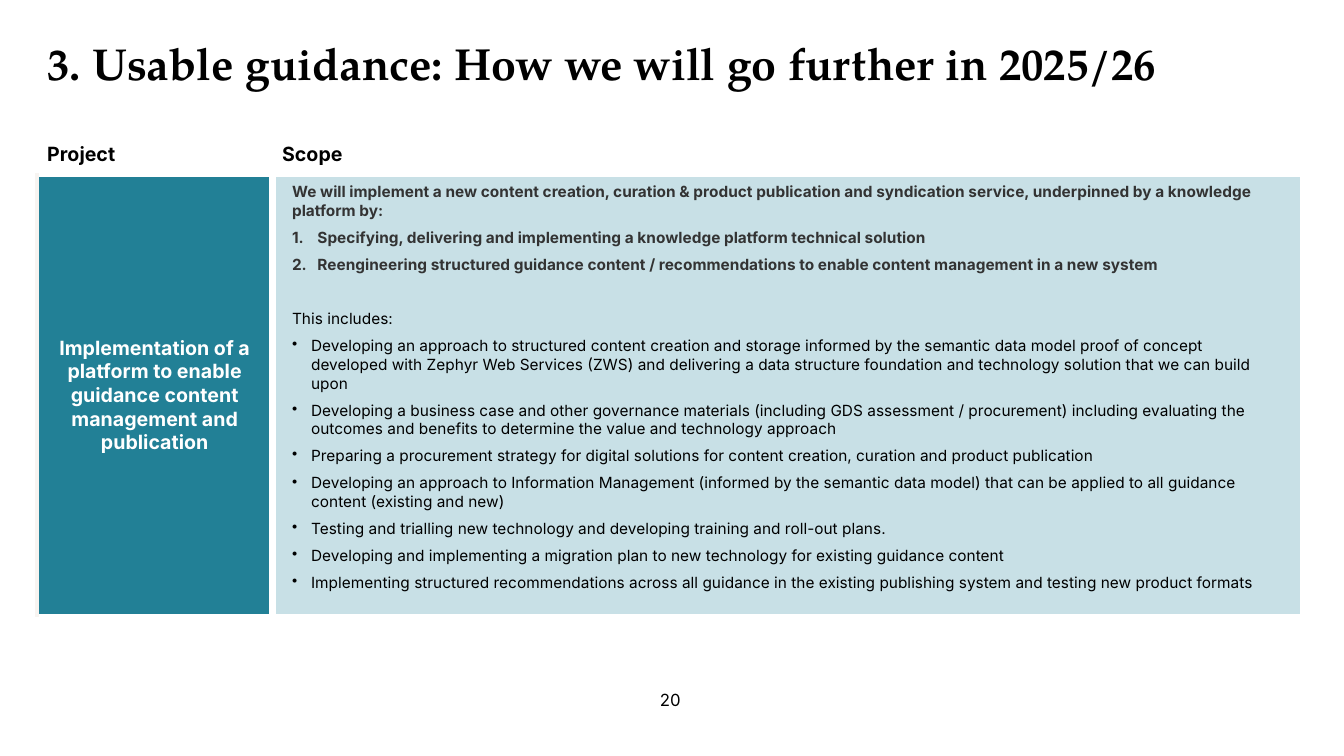
import pptx
import pptx.util
import pptx.dml.color
import pptx.enum.text
from lxml import etree
from pptx.oxml.ns import qn

Cm, Pt = pptx.util.Cm, pptx.util.Pt
RGBColor = pptx.dml.color.RGBColor
ALIGN, ANCHOR = pptx.enum.text.PP_ALIGN, pptx.enum.text.MSO_ANCHOR

BLACK = RGBColor(0x00, 0x00, 0x00)
WHITE = RGBColor(0xFF, 0xFF, 0xFF)
CHARCOAL = RGBColor(0x33, 0x33, 0x33)
TEAL = RGBColor(0x22, 0x80, 0x96)
PALE_TEAL = RGBColor(0xC8, 0xE0, 0xE6)
CREAM = RGBColor(0xF7, 0xF4, 0xF1)
HEADING_FONT, BODY_FONT = "TeX Gyre Pagella", "Inter"

TITLE = "3. Usable guidance: How we will go further in 2025/26"
PAGE_NUMBER = "20"
HEADINGS = ["Project", "Scope"]
PROJECT = "Implementation of a platform to enable guidance content management and publication"
AIM = ("We will implement a new content creation, curation & product publication and "
       "syndication service, underpinned by a knowledge platform by:")
STEPS = [
    "Specifying, delivering and implementing a knowledge platform technical solution",
    "Reengineering structured guidance content / recommendations to enable content management in a new system",
]
INCLUDES = "This includes:"
ACTIVITIES = [
    "Developing an approach to structured content creation and storage informed by the semantic data model "
    "proof of concept developed with Zephyr Web Services (ZWS) and delivering a data structure foundation "
    "and technology solution that we can build upon",
    "Developing a business case and other governance materials (including GDS assessment / procurement) "
    "including evaluating the outcomes and benefits to determine the value and technology approach",
    "Preparing a procurement strategy for digital solutions for content creation, curation and product publication",
    "Developing an approach to Information Management (informed by the semantic data model) that can be "
    "applied to all guidance content (existing and new)",
    "Testing and trialling new technology and developing training and roll-out plans.",
    "Developing and implementing a migration plan to new technology for existing guidance content",
    "Implementing structured recommendations across all guidance in the existing publishing system "
    "and testing new product formats",
]

LEFT = Cm(0.94)
COLUMN_WIDTHS = [Cm(5.92), Cm(25.96)]
ROW_HEIGHTS = [Cm(1.03), Cm(11.1)]
NUMBER, BULLET = ("buAutoNum", "type", "arabicPeriod"), ("buChar", "char", "•")
SCOPE = (
    [(AIM, None, 0, True, CHARCOAL, 0)]
    + [(step, NUMBER, 0.64, True, CHARCOAL, 6) for step in STEPS]
    + [(INCLUDES, None, 0, False, BLACK, 25.3)]
    + [(activity, BULLET, 0.48, False, BLACK, 6) for activity in ACTIVITIES]
)


def style(paragraph, size, color, bold=False, font=BODY_FONT, align=ALIGN.LEFT):
    paragraph.alignment = align
    for run in paragraph.runs:
        run.font.name = font
        run.font.size = Pt(size)
        run.font.bold = bold
        run.font.color.rgb = color


def mark(paragraph, marker, indent):
    properties = paragraph._p.get_or_add_pPr()
    properties.set("marL", str(Cm(indent)))
    properties.set("indent", str(-Cm(indent)))
    tag, attribute, value = marker
    etree.SubElement(properties, qn("a:" + tag)).set(attribute, value)


def format_cell(cell, fill, side_margin, borders, anchor=ANCHOR.TOP):
    cell.fill.solid()
    cell.fill.fore_color.rgb = fill
    cell.margin_left = cell.margin_right = Cm(side_margin)
    cell.margin_top = cell.margin_bottom = Cm(0.2)
    cell.vertical_anchor = anchor
    properties = cell._tc.get_or_add_tcPr()
    for position, (side, (width, color)) in enumerate(zip("LRTB", borders)):
        line = etree.Element(qn("a:ln" + side), w=str(Pt(width)))
        solid = etree.SubElement(line, qn("a:solidFill"))
        etree.SubElement(solid, qn("a:srgbClr")).set("val", str(color))
        properties.insert(position, line)


def main():
    deck = pptx.Presentation()
    deck.slide_width, deck.slide_height = Cm(33.87), Cm(19.05)
    slide = deck.slides.add_slide(deck.slide_layouts[5])

    title = slide.shapes.title
    title.left, title.top, title.width, title.height = LEFT, Cm(0.69), Cm(30.76), Cm(1.75)
    title.text_frame.text = TITLE
    title.text_frame.auto_size = pptx.enum.text.MSO_AUTO_SIZE.NONE
    title.text_frame.vertical_anchor = ANCHOR.MIDDLE
    style(title.text_frame.paragraphs[0], 32, BLACK, True, HEADING_FONT)

    table = slide.shapes.add_table(
        2, 2, LEFT, Cm(3.38), sum(COLUMN_WIDTHS), sum(ROW_HEIGHTS)).table
    table.first_row = table.horz_banding = False
    for column, width in zip(table.columns, COLUMN_WIDTHS):
        column.width = width
    for row, height in zip(table.rows, ROW_HEIGHTS):
        row.height = height

    thin, thick = (3, WHITE), (6, WHITE)
    project_borders = [(3, CREAM), thick, thin, thin]
    scope_borders = [thick, thin, thin, thin]
    heading_borders = [[thin, thick, thin, thin], scope_borders]
    for index, heading in enumerate(HEADINGS):
        cell = table.cell(0, index)
        cell.text_frame.text = heading
        style(cell.text_frame.paragraphs[0], 14, BLACK, True)
        format_cell(cell, WHITE, 0.25, heading_borders[index])

    project = table.cell(1, 0)
    project.text_frame.text = PROJECT
    style(project.text_frame.paragraphs[0], 14, WHITE, True, align=ALIGN.CENTER)
    format_cell(project, TEAL, 0.38, project_borders, ANCHOR.MIDDLE)

    scope = table.cell(1, 1)
    scope.text_frame.text = "\n".join(entry[0] for entry in SCOPE)
    for paragraph, entry in zip(scope.text_frame.paragraphs, SCOPE):
        marker, indent, bold, color, gap = entry[1:]
        if marker:
            mark(paragraph, marker, indent)
        paragraph.space_before = Pt(gap)
        style(paragraph, 11, color, bold)
    format_cell(scope, PALE_TEAL, 0.5, scope_borders)

    page_number = slide.shapes.add_textbox(Cm(13.08), Cm(17.12), Cm(7.62), Cm(1.02)).text_frame
    page_number.word_wrap = True
    page_number.vertical_anchor = ANCHOR.MIDDLE
    page_number.text = PAGE_NUMBER
    style(page_number.paragraphs[0], 12, BLACK, align=ALIGN.CENTER)

    deck.save("out.pptx")


if __name__ == "__main__":
    main()
